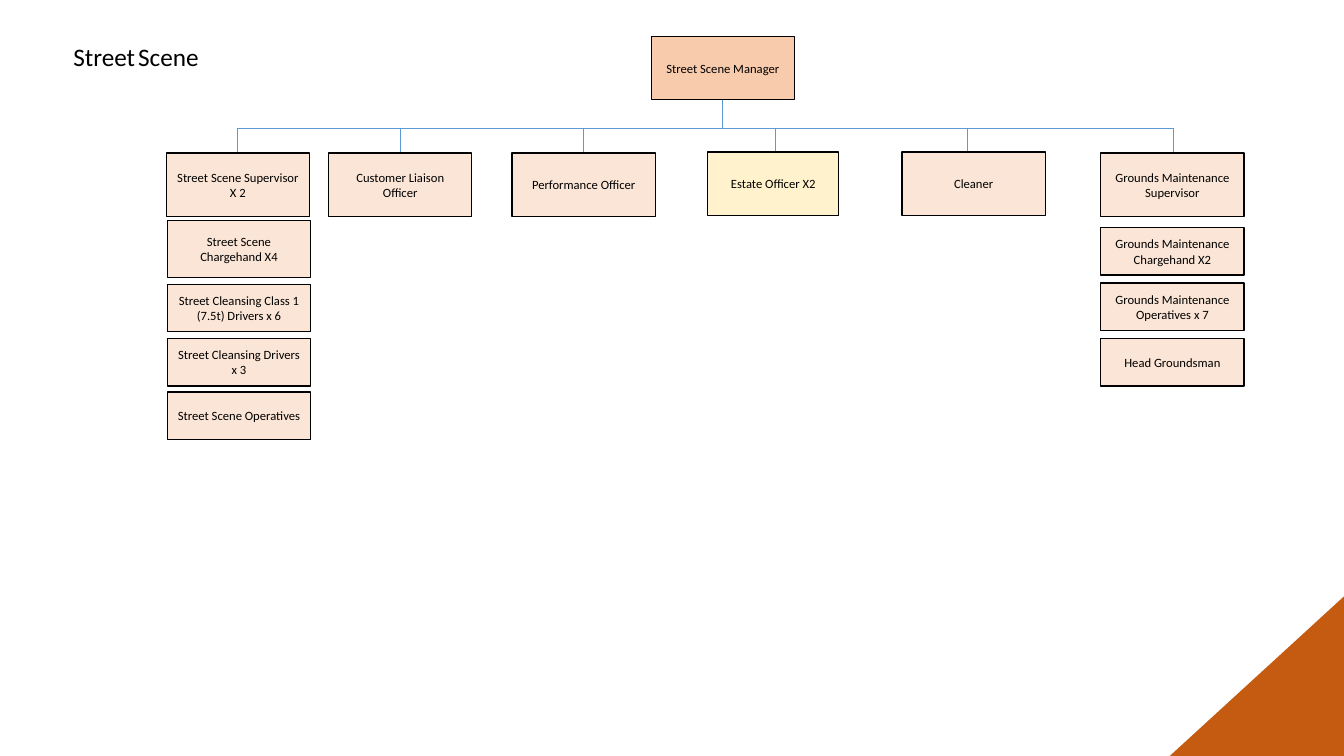
from lxml.etree import SubElement
from pptx import Presentation
from pptx.dml.color import RGBColor
from pptx.enum.shapes import MSO_CONNECTOR, MSO_SHAPE
from pptx.enum.text import MSO_ANCHOR, PP_ALIGN
from pptx.oxml.ns import qn
from pptx.util import Inches, Pt


def colour(hex_code):
    return RGBColor.from_string(hex_code)


class OrgChart:
    """Draws on one slide; every length is a percentage of the slide's size."""

    STYLE = {"font": "Calibri", "ink": "000000", "staff": "FBE5D6", "manager": "F8CBAD",
             "estate": "FFF2CC", "link": "5B9BD5", "corner": "C55A11"}
    BOX_TEXT = {"word_wrap": True, "vertical_anchor": MSO_ANCHOR.MIDDLE}

    def __init__(self, deck):
        self.deck = deck
        self.slide = deck.slides.add_slide(deck.slide_layouts[6])

    def x(self, share):
        return round(self.deck.slide_width * share / 100)

    def y(self, share):
        return round(self.deck.slide_height * share / 100)

    def area(self, left, top, width, height):
        return self.x(left), self.y(top), self.x(width), self.y(height)

    def add_words(self, paragraph, words, size):
        run = paragraph.add_run()
        run.text = words
        for key, value in {"name": self.STYLE["font"], "size": Pt(size)}.items():
            setattr(run.font, key, value)
        run.font.color.rgb = colour(self.STYLE["ink"])

    def title(self, sized_words, left, top, width, height):
        frame = self.slide.shapes.add_textbox(*self.area(left, top, width, height)).text_frame
        frame.word_wrap = True
        for words, size in sized_words:
            self.add_words(frame.paragraphs[0], words, size)

    def link(self, x1, y1, x2, y2):
        line = self.slide.shapes.add_connector(
            MSO_CONNECTOR.STRAIGHT, self.x(x1), self.y(y1), self.x(x2), self.y(y2))
        line.line.color.rgb = colour(self.STYLE["link"])
        line.line.width = Pt(0.5)
        SubElement(line._element.spPr, qn("a:effectLst"))

    def solid(self, preset, fill, *area):
        shape = self.slide.shapes.add_shape(preset, *self.area(*area))
        shape.shadow.inherit = False
        shape.fill.solid()
        shape.fill.fore_color.rgb = colour(self.STYLE[fill])
        return shape

    def post(self, role, centre, top, height=8.4, width=10.65, fill="staff"):
        """Adds a job box centred on a column; each line of role is a paragraph."""
        box = self.solid(MSO_SHAPE.RECTANGLE, fill, centre - width / 2, top, width, height)
        box.line.color.rgb = colour(self.STYLE["ink"])
        box.line.width = Pt(1)
        frame = box.text_frame
        for key, value in self.BOX_TEXT.items():
            setattr(frame, key, value)
        for number, words in enumerate(role.split("\n")):
            paragraph = frame.add_paragraph() if number else frame.paragraphs[0]
            paragraph.alignment = PP_ALIGN.CENTER
            self.add_words(paragraph, words, 9)

    def corner(self, *area):
        triangle = self.solid(MSO_SHAPE.RIGHT_TRIANGLE, "corner", *area)
        triangle.line.fill.background()
        triangle._element.spPr.xfrm.set("flipH", "1")


MANAGER_X, BUS_Y = 53.78, 16.93
SHORT = 6.27

# role, box centre, link x, box top, format
REPORTS = [
    ("Street Scene Supervisor X 2", 17.7, 17.7, 20.27, {}),
    ("Customer Liaison Officer", 29.78, 29.78, 20.27, {}),
    ("Performance Officer", 43.43, 43.43, 20.27, {}),
    ("Estate Officer X2", 57.53, 57.68, 20.13, {"fill": "estate", "width": 9.75}),
    ("Cleaner", 72.45, 72, 20.13, {}),
    ("Grounds Maintenance Supervisor", 87.23, 87.3, 20.27, {}),
]

# role, top, height
STREET_TEAM = [
    ("Street Scene Chargehand X4", 29.2, 7.47),
    ("Street Cleansing Class 1 (7.5t) Drivers x 6", 37.6, SHORT),
    ("Street Cleansing Drivers\nx 3", 44.8, SHORT),
    ("Street Scene Operatives", 51.87, SHORT),
]
GROUNDS_TEAM = ["Grounds Maintenance Chargehand X2", "Grounds Maintenance Operatives x 7",
                "Head Groundsman"]


def main():
    deck = Presentation()
    deck.slide_width, deck.slide_height = Inches(13.33), Inches(7.5)
    chart = OrgChart(deck)

    chart.link(MANAGER_X, 12.67, MANAGER_X, BUS_Y)
    chart.link(REPORTS[0][2], BUS_Y, REPORTS[-1][2], BUS_Y)
    for _, _, link_x, _, _ in REPORTS:
        chart.link(link_x, BUS_Y, link_x, 22.53)

    chart.corner(86.63, 78.8, 13.43, 21.87)
    chart.title([("Street", 18), (" ", 9), ("Scene", 18)], 4.73, 4.8, 18.6, 5.33)
    chart.post("Street Scene Manager", MANAGER_X, 4.8, fill="manager")
    for role, centre, _, top, box_format in REPORTS:
        chart.post(role, centre, top, **box_format)
    for role, top, height in STREET_TEAM:
        chart.post(role, 17.78, top, height)
    for row, role in enumerate(GROUNDS_TEAM):
        chart.post(role, REPORTS[-1][1], 30.13 + 7.33 * row, SHORT)

    deck.save("out.pptx")


if __name__ == "__main__":
    main()
